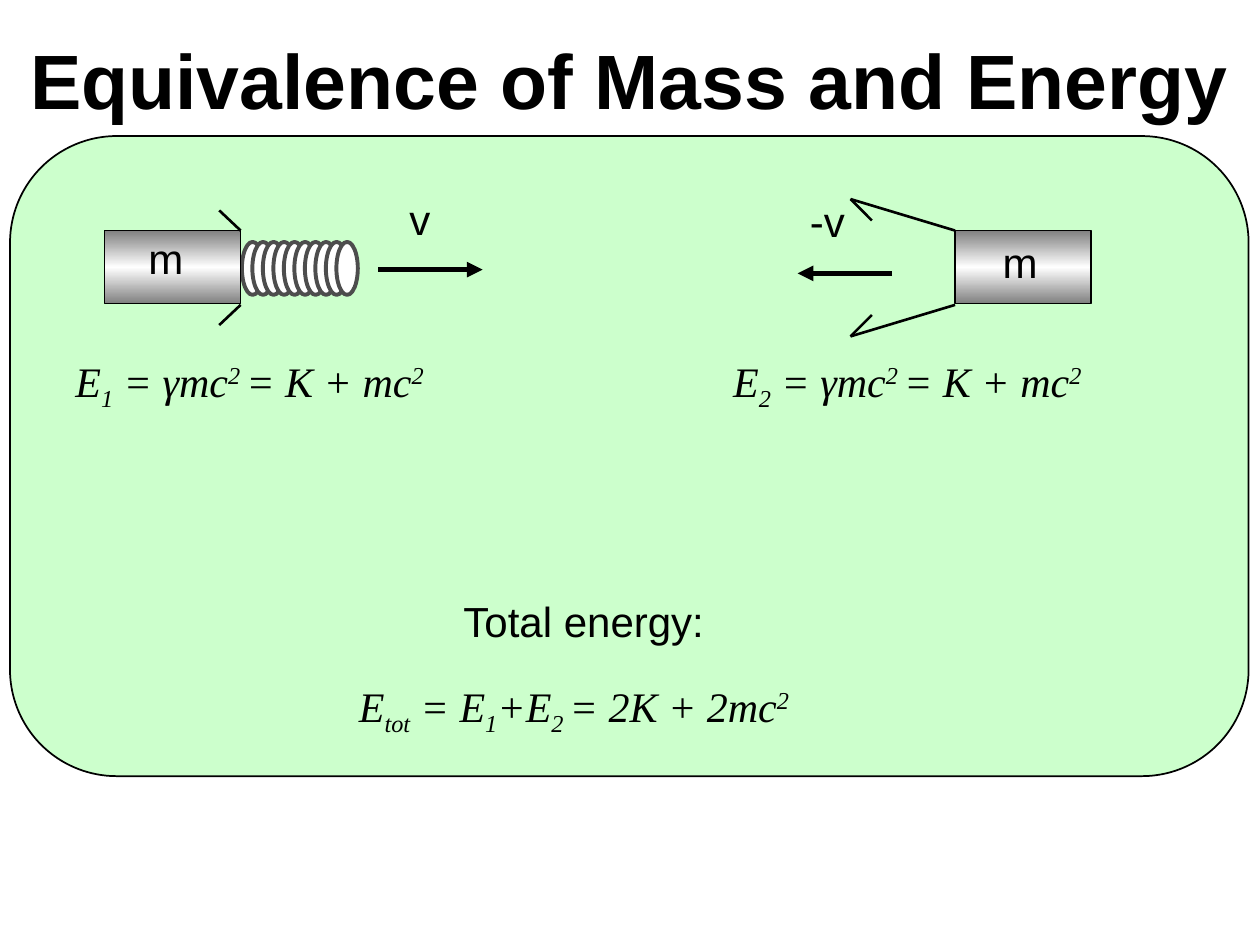
from copy import deepcopy
from pptx import Presentation
from pptx.dml.color import RGBColor
from pptx.enum.shapes import MSO_CONNECTOR, MSO_SHAPE
from pptx.enum.text import MSO_ANCHOR, MSO_AUTO_SIZE, PP_ALIGN
from pptx.oxml.ns import qn
from pptx.util import Inches, Pt
from lxml.etree import SubElement

BLACK = RGBColor(0x00, 0x00, 0x00)
WHITE = RGBColor(0xFF, 0xFF, 0xFF)
GREEN = RGBColor(0xCC, 0xFF, 0xCC)
GRAY = RGBColor(0x80, 0x80, 0x80)
DARK = RGBColor(0x4D, 0x4D, 0x4D)
SUB, SUP = -25, 30


class Deck:
    """Holds the text style and the current slide, and draws its elements."""

    sans, serif, size = "Arial", "Times New Roman", 24

    def __init__(self):
        self.prs = Presentation()
        self.prs.slide_width, self.prs.slide_height = Inches(10), Inches(7.5)
        self.slide = self.prs.slides.add_slide(self.prs.slide_layouts[5])
        self.shapes = self.slide.shapes

    def run(self, para, text, face, size, base=0):
        run = para.add_run()
        run.text = text
        run.font.name, run.font.size = face, Pt(size)
        run.font.color.rgb = BLACK
        if base:
            run.font._element.set("baseline", str(base * 1000))
        return run

    def title(self, text, box):
        head = self.shapes.title
        head.left, head.top, head.width, head.height = map(Inches, box)
        frame = head.text_frame
        frame.word_wrap, frame.auto_size = True, MSO_AUTO_SIZE.NONE
        frame.vertical_anchor = MSO_ANCHOR.MIDDLE
        para = frame.paragraphs[0]
        para.alignment = PP_ALIGN.CENTER
        self.run(para, text, self.sans, 44).font.bold = True
        self.shapes._spTree.append(head._element)

    def shape(self, kind, box, fill, line, width):
        item = self.shapes.add_shape(kind, *map(Inches, box))
        item.shadow.inherit = False
        item.fill.solid()
        item.fill.fore_color.rgb = fill
        item.line.color.rgb, item.line.width = line, Pt(width)
        return item

    def block(self, left, top):
        box = (left, top, 1.08, 0.58)
        fill = self.shape(MSO_SHAPE.RECTANGLE, box, GRAY, BLACK, 0.75).fill
        fill.gradient()
        fill.gradient_angle = 90
        first = fill.gradient_stops[0]._gs
        first.addnext(deepcopy(first))
        looks = ((0, GRAY), (0.5, WHITE), (1, GRAY))
        for stop, (place, color) in zip(fill.gradient_stops, looks):
            stop.position, stop.color.rgb = place, color

    def text(self, parts, box, face=sans, fill=None):
        item = self.shapes.add_textbox(*map(Inches, box))
        if fill:
            item.fill.solid()
            item.fill.fore_color.rgb = fill
        frame = item.text_frame
        frame.word_wrap = False
        frame.auto_size = MSO_AUTO_SIZE.SHAPE_TO_FIT_TEXT
        for words, base in parts:
            run = self.run(frame.paragraphs[0], words, face, self.size, base)
            run.font.italic = face == self.serif

    def line(self, start, end, width=1.5, arrow=False):
        item = self.shapes.add_connector(
            MSO_CONNECTOR.STRAIGHT, *map(Inches, start + end))
        item.line.color.rgb, item.line.width = BLACK, Pt(width)
        if arrow:
            SubElement(item.line._get_or_add_ln(), qn("a:tailEnd"), type="triangle")
        SubElement(item._element.spPr, qn("a:effectLst"))


def main():
    deck = Deck()
    deck.shape(MSO_SHAPE.ROUNDED_RECTANGLE, (0.08, 1.08, 9.83, 5.08), GREEN, BLACK, 1)
    total = [("E", 0), ("tot", SUB), (" = E", 0), ("1", SUB), ("+E", 0),
             ("2 ", SUB), ("= 2K + 2mc", 0), ("2", SUP)]
    deck.text(total, (2.75, 5.35, 4.29, 0.57), deck.serif, GREEN)
    deck.text([("Total energy:", 0)], (3.58, 4.68, 2.58, 0.57), fill=GREEN)
    deck.title("Equivalence of Mass and Energy", (0, 0, 10, 1.25))

    for coil in range(10):
        box = (1.92 + coil / 12, 1.92, 0.17, 0.42)
        deck.shape(MSO_SHAPE.OVAL, box, WHITE, DARK, 2.25)
    for left in (0.83, 7.58):
        deck.block(left, 1.83)
    for edge, way in ((1.83, -1), (2.42, 1)):
        tip = edge + way * 0.25
        deck.line((1.74, edge + way * 0.16), (1.91, edge))
        deck.line((7.58, edge), (6.75, tip))
        deck.line((6.75, tip), (6.92, tip - way * 0.17))

    deck.line((3, 2.14), (3.83, 2.14), 3, True)
    deck.line((7.08, 2.17), (6.33, 2.17), 3, True)
    labels = (("m", 1.08, 1.8, 0.53), ("m", 7.86, 1.83, 0.53),
              ("v", 3.15, 1.49, 0.4), ("-v", 6.33, 1.5, 0.53))
    for words, left, top, width in labels:
        deck.text([(words, 0)], (left, top, width, 0.57))
    for mark, left in (("1", 0.5), ("2", 5.72)):
        parts = [("E", 0), (mark, SUB), (" = γmc", 0), ("2 ", SUP),
                 ("= K + mc", 0), ("2", SUP)]
        deck.text(parts, (left, 2.77, 3.49, 0.57), deck.serif)
    deck.prs.save("out.pptx")


if __name__ == "__main__":
    main()
